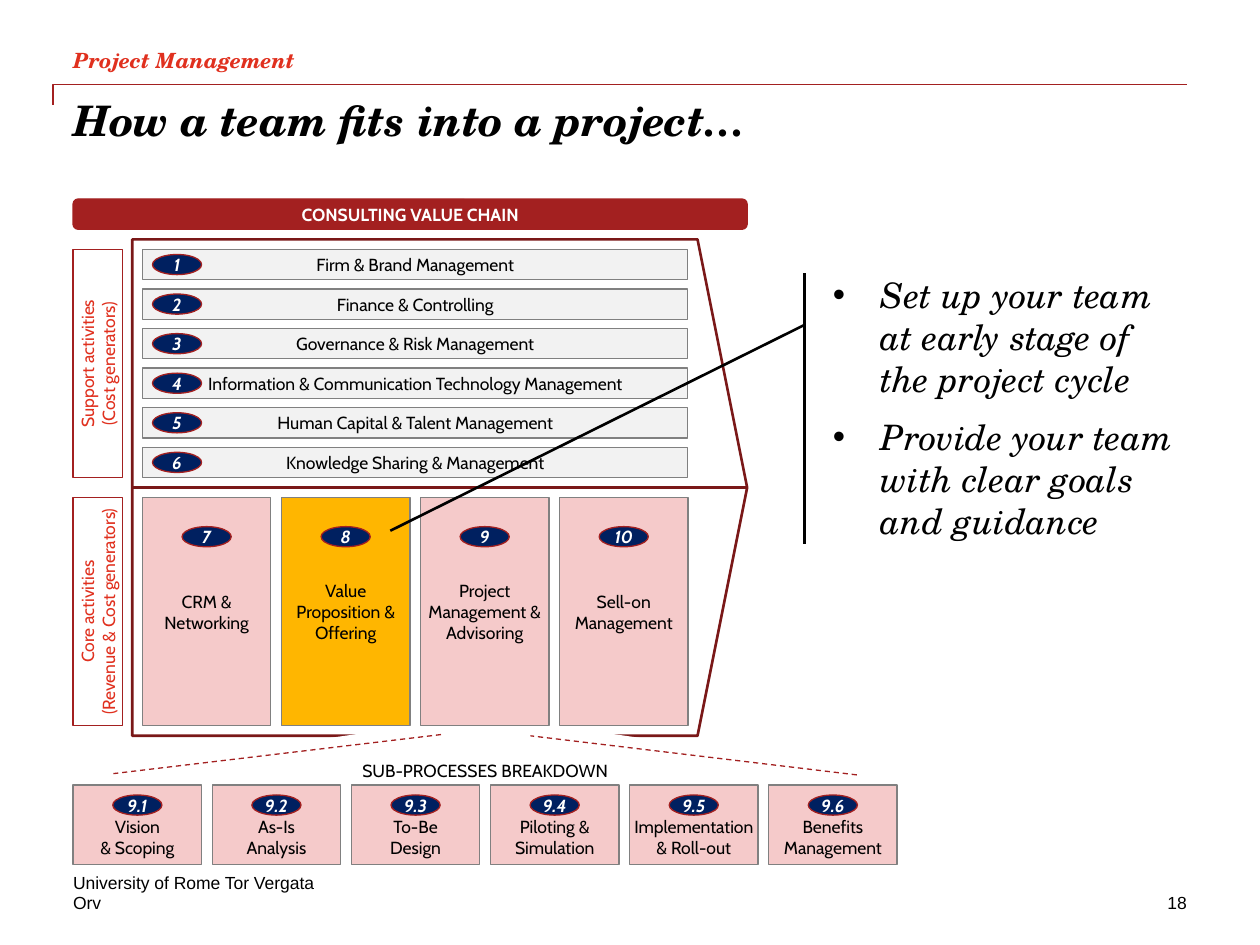
"""Build the slide on how a team fits into a consulting project."""
from lxml import etree
from pptx import Presentation
from pptx.dml.color import RGBColor
from pptx.enum.dml import MSO_LINE
from pptx.enum.shapes import MSO_CONNECTOR, MSO_SHAPE
from pptx.enum.text import MSO_ANCHOR, MSO_AUTO_SIZE, PP_ALIGN
from pptx.oxml.ns import qn
from pptx.util import Inches, Pt

LEFT, CENTER, RIGHT = PP_ALIGN.LEFT, PP_ALIGN.CENTER, PP_ALIGN.RIGHT
TOP, MIDDLE, BOTTOM = MSO_ANCHOR.TOP, MSO_ANCHOR.MIDDLE, MSO_ANCHOR.BOTTOM
RECTANGLE, ROUNDED, OVAL = MSO_SHAPE.RECTANGLE, MSO_SHAPE.ROUNDED_RECTANGLE, MSO_SHAPE.OVAL
PENTAGON, TRIANGLE = MSO_SHAPE.PENTAGON, MSO_SHAPE.ISOSCELES_TRIANGLE
CALLOUT = MSO_SHAPE.LINE_CALLOUT_1_ACCENT_BAR
STRAIGHT, DASH = MSO_CONNECTOR.STRAIGHT, MSO_LINE.DASH
NO_FIT = MSO_AUTO_SIZE.NONE

BLACK = RGBColor(0x00, 0x00, 0x00)
WHITE = RGBColor(0xFF, 0xFF, 0xFF)
RED = RGBColor(0xE0, 0x30, 0x1E)
CRIMSON = RGBColor(0xA3, 0x20, 0x20)
MAROON = RGBColor(0x7A, 0x18, 0x18)
NAVY = RGBColor(0x00, 0x20, 0x60)
GREY = RGBColor(0x80, 0x80, 0x80)
PALE_GREY = RGBColor(0xF2, 0xF2, 0xF2)
PINK = RGBColor(0xF5, 0xCA, 0xCA)
AMBER = RGBColor(0xFF, 0xB6, 0x00)

DIAGRAM_FONT = {"name": "Cabin", "size": Pt(10)}
BADGE_FONT = DIAGRAM_FONT | {"bold": True, "italic": True}
FOOTER_FONT = {"name": "Arial", "size": Pt(10)}
SERIF_FONT = {"name": "TeX Gyre Schola", "italic": True}
PADDING = (0.04, 0.04, 0.04, 0.04)
BADGE_PADDING = (0.01, 0.24, 0.01, 0.04)
FLUSH = (0, 0, 0, 0)

TITLE = "How a team fits into a project…"
LABELS = [
    ((0.58, 0.33, 8.83, 0.25), "Project Management",
     SERIF_FONT | {"size": Pt(12), "bold": True}, RED, LEFT, BOTTOM),
    ((0.58, 6.92, 5.75, 0.17), "University of Rome Tor Vergata",
     FOOTER_FONT, BLACK, LEFT, BOTTOM),
    ((0.58, 7.08, 2.83, 0.17), "Orv", FOOTER_FONT, BLACK, LEFT, TOP),
    ((7.75, 7.08, 1.67, 0.17), "18", FOOTER_FONT, BLACK, RIGHT, TOP),
]
SUPPORT = [
    "Firm & Brand Management",
    "Finance & Controlling",
    "Governance & Risk Management",
    "Information & Communication Technology Management",
    "Human Capital & Talent Management",
    "Knowledge Sharing & Management",
]
CORE = [
    ("CRM & Networking", PINK),
    ("Value Proposition & Offering", AMBER),
    ("Project Management & Advisoring", PINK),
    ("Sell-on Management", PINK),
]
SUB_PROCESSES = [
    "Vision\n& Scoping",
    "As-Is\nAnalysis",
    "To-Be\nDesign",
    "Piloting & Simulation",
    "Implementation\n& Roll-out",
    "Benefits Management",
]
SIDE_LABELS = [
    (1.98, "Support activities\n(Cost generators)"),
    (3.95, "Core activities\n(Revenue & Cost generators)"),
]
ADVICE = [
    "Set up your team at early stage of the project cycle",
    "Provide your team with clear goals and guidance",
]
CELL_WIDTH, CORE_HEIGHT, SUB_HEIGHT = 1.02, 1.81, 0.63
BADGE_WIDTH, BADGE_HEIGHT = 0.39, 0.16


def spread(first, last, count):
    """Return evenly spaced positions from first to last."""
    return [first + (last - first) * index / (count - 1) for index in range(count)]


def write(box, text, font, color=BLACK, align=CENTER, anchor=MIDDLE, margins=FLUSH):
    """Fill a text-bearing object, one paragraph per line."""
    frame = box.text_frame
    frame.text = text
    sides = ("margin_left", "margin_top", "margin_right", "margin_bottom")
    settings = dict(zip(sides, map(Inches, margins)))
    settings |= {"word_wrap": True, "auto_size": NO_FIT, "vertical_anchor": anchor}
    for name, value in settings.items():
        setattr(frame, name, value)
    for para in frame.paragraphs:
        para.alignment = align
        for span in para.runs:
            span.font.color.rgb = color
            for name, value in font.items():
                setattr(span.font, name, value)


def style(shape, fill=None, line=None, width=0.75):
    """Set fill and outline; None leaves either one empty."""
    shape.shadow.inherit = False
    for part, color in ((shape.fill, fill), (shape.line.fill, line)):
        if color is None:
            part.background()
        else:
            part.solid()
            part.fore_color.rgb = color
    if line is not None:
        shape.line.width = Pt(width)


def add_shape(page, kind, at, fill=None, line=None, width=0.75):
    shape = page.shapes.add_shape(kind, *map(Inches, at))
    style(shape, fill, line, width)
    return shape


def add_line(page, ends, color, width=0.75, dash=None):
    line = page.shapes.add_connector(STRAIGHT, *map(Inches, ends))
    line.line.color.rgb = color
    line.line.width = Pt(width)
    line.line.dash_style = dash
    etree.SubElement(line._element.spPr, qn("a:effectLst"))


def add_label(page, at, *text):
    write(page.shapes.add_textbox(*map(Inches, at)), *text)


def add_cell(page, at, text, fill, margins=PADDING):
    cell = add_shape(page, RECTANGLE, at, fill, GREY)
    write(cell, text, DIAGRAM_FONT, margins=margins)


def add_badge(page, left, top, number):
    badge = add_shape(page, OVAL, (left, top, BADGE_WIDTH, BADGE_HEIGHT), NAVY, CRIMSON)
    write(badge, number, BADGE_FONT, WHITE)


def add_column(page, left, top, height, badge_top, number, text, fill, margins):
    add_cell(page, (left, top, CELL_WIDTH, height), text, fill, margins)
    add_badge(page, left + (CELL_WIDTH - BADGE_WIDTH) / 2, badge_top, number)


def add_header(page):
    builder = page.shapes.build_freeform(Inches(0.42), Inches(0.83))
    corners = [(Inches(0.42), Inches(0.67)), (Inches(9.42), Inches(0.67))]
    builder.add_line_segments(corners, close=False)
    style(builder.convert_to_shape(), line=CRIMSON, width=1)
    title = page.shapes.title
    title.left, title.top, title.width, title.height = map(Inches, (0.58, 0.75, 8.83, 1))
    write(title, TITLE, SERIF_FONT | {"size": Pt(24), "bold": True}, align=LEFT, anchor=TOP)


def add_value_chain(page):
    banner = add_shape(page, ROUNDED, (0.58, 1.58, 5.35, 0.24), CRIMSON, CRIMSON)
    write(banner, "CONSULTING VALUE CHAIN", DIAGRAM_FONT | {"bold": True}, WHITE, margins=PADDING)
    for number, (top, text) in enumerate(zip(spread(1.98, 3.55, len(SUPPORT)), SUPPORT), 1):
        add_cell(page, (1.13, top, 4.33, 0.24), text, PALE_GREY)
        add_badge(page, 1.21, top + 0.04, str(number))
    for top, text in SIDE_LABELS:
        side = add_shape(page, RECTANGLE, (0.58, top, 0.39, 1.81), line=CRIMSON)
        write(side, text, DIAGRAM_FONT, RED)
        side.text_frame._txBody.bodyPr.set("vert", "vert270")
    frame = add_shape(page, PENTAGON, (1.05, 1.9, 4.88, 3.94), line=MAROON, width=1.5)
    frame.adjustments[0] = 0.1
    add_line(page, (5.93, 3.87, 1.05, 3.87), MAROON, 1.5)
    add_shape(page, TRIANGLE, (0.58, 5.68, 6.54, 0.47), WHITE)
    for ends in ((3.5, 5.83, 0.9, 6.14), (6.8, 6.15, 4.21, 5.84)):
        add_line(page, ends, CRIMSON, dash=DASH)
    lefts = spread(1.13, 4.44, len(CORE))
    for number, (left, (text, fill)) in enumerate(zip(lefts, CORE), len(SUPPORT) + 1):
        add_column(page, left, 3.95, CORE_HEIGHT, 4.18, str(number), text, fill, PADDING)


def add_breakdown(page):
    add_label(page, (0.58, 6, 6.54, 0.23), "SUB-PROCESSES BREAKDOWN", DIAGRAM_FONT)
    lefts = spread(0.58, 6.1, len(SUB_PROCESSES))
    for number, (left, text) in enumerate(zip(lefts, SUB_PROCESSES), 1):
        add_column(page, left, 6.23, SUB_HEIGHT, 6.31, f"9.{number}", text, PINK, BADGE_PADDING)


def add_advice(page):
    callout = add_shape(page, CALLOUT, (6.61, 2.17, 2.81, 2.15), line=BLACK, width=1.5)
    for index, value in enumerate((0.19, -0.08, 0.95, -1.25)):
        callout.adjustments[index] = value
    write(callout, "\n".join(ADVICE), SERIF_FONT | {"size": Pt(20)}, align=LEFT, anchor=TOP)
    for para in callout.text_frame.paragraphs:
        para.space_after = Pt(9)
        properties = para._p.get_or_add_pPr()
        properties.set("marL", str(Inches(0.38)))
        properties.set("indent", str(-Inches(0.38)))
        etree.SubElement(properties, qn("a:buFont"), typeface="Arial")
        etree.SubElement(properties, qn("a:buChar"), char="•")


def main():
    deck = Presentation()
    deck.slide_width, deck.slide_height = Inches(10), Inches(7.5)
    page = deck.slides.add_slide(deck.slide_layouts[5])
    add_header(page)
    for label in LABELS:
        add_label(page, *label)
    add_value_chain(page)
    add_breakdown(page)
    add_advice(page)
    deck.save("out.pptx")


if __name__ == "__main__":
    main()
